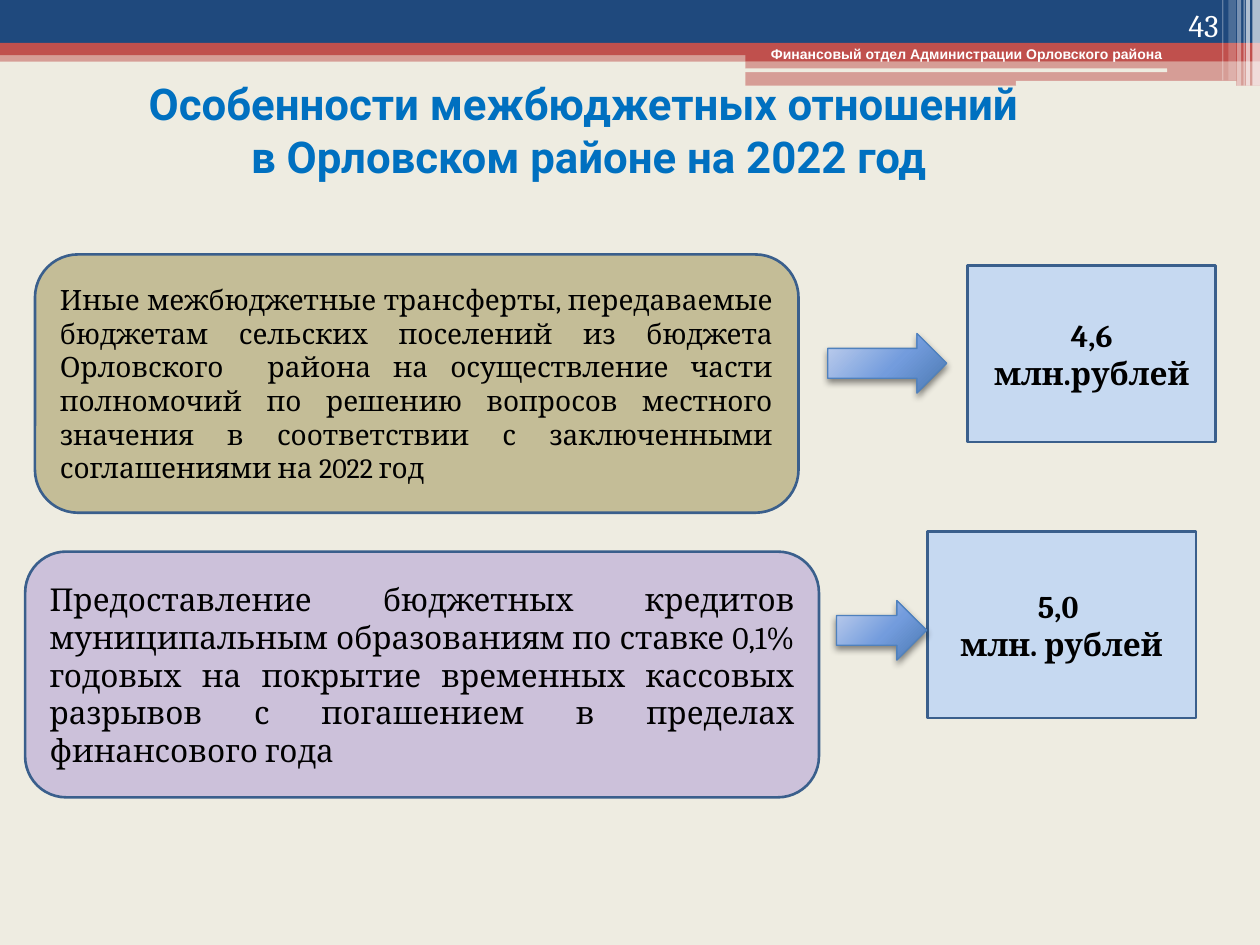
"""Builds a slide on inter-budget relations in the Orlovsky district."""
from dataclasses import dataclass

from lxml import etree
from pptx import Presentation, util as u
from pptx.dml.color import RGBColor
from pptx.enum import shapes, text
from pptx.oxml.ns import qn


@dataclass(frozen=True)
class Theme:
    """Colours, fonts and type sizes of the slide."""
    background: str = "EEECE1"
    navy: str = "1F497D"
    red: str = "C0504D"
    white: str = "FFFFFF"
    black: str = "000000"
    title: str = "0070C0"
    outline: str = "3A5F8C"
    arrow_outline: str = "4F81BD"
    amount: str = "C6D9F1"
    khaki: str = "C4BD97"
    lilac: str = "CCC1DA"
    arrow_stops: tuple = ((0, "C4D2EE"), (55, "739CDD"), (100, "4A78B0"))
    body_font: str = "Cambria"
    title_font: str = "Roboto"
    header_font: str = "Arial"
    title_size: int = 25
    body_size: int = 18
    small_size: int = 16
    header_size: int = 8


THEME = Theme()
RECTANGLE = shapes.MSO_SHAPE.RECTANGLE
ROUNDED = shapes.MSO_SHAPE.ROUNDED_RECTANGLE
ALIGN = text.PP_ALIGN
ANCHOR = text.MSO_ANCHOR


def add_element(parent, tag, **attributes):
    """Append a DrawingML element and return it."""
    values = {name: str(value) for name, value in attributes.items()}
    return etree.SubElement(parent, qn(f"a:{tag}"), values)


def add_color(parent, color, opacity=100):
    """Append an RGB colour with its opacity in percent."""
    element = add_element(parent, "srgbClr", val=color)
    if opacity < 100:
        add_element(element, "alpha", val=opacity * 1000)


def add_block(slide, kind, box, fill=None, opacity=100, line=None, weight=1.5):
    """Add a preset shape without shadow; box is left, top, width, height."""
    shape = slide.shapes.add_shape(kind, *map(u.Pt, box))
    shape.shadow.inherit = False
    if fill:
        shape.fill.solid()
        shape.fill.fore_color.rgb = RGBColor.from_string(fill)
        if opacity < 100:
            color = shape.fill._xPr.find(qn("a:solidFill"))[0]
            add_element(color, "alpha", val=opacity * 1000)
    if line:
        shape.line.color.rgb = RGBColor.from_string(line)
        shape.line.width = u.Pt(weight)
    else:
        shape.line.fill.background()
    return shape


def write_text(shape, *lines, size=THEME.body_size, font=THEME.body_font,
               color=THEME.black, bold=False, align=ALIGN.CENTER,
               anchor=ANCHOR.MIDDLE, indent=0):
    """Write one paragraph per line into the shape."""
    frame = shape.text_frame
    frame.word_wrap = True
    frame.vertical_anchor = anchor
    frame.margin_left = u.Pt(7.2 + indent)
    for index, line in enumerate(lines):
        paragraph = frame.add_paragraph() if index else frame.paragraphs[0]
        paragraph.text = line
        paragraph.alignment = align
        paragraph.font.size = u.Pt(size)
        paragraph.font.name = font
        paragraph.font.bold = bold
        paragraph.font.color.rgb = RGBColor.from_string(color)


def add_label(slide, box, line, **text_format):
    """Add a text box with one paragraph."""
    write_text(slide.shapes.add_textbox(*map(u.Pt, box)), line, **text_format)


def add_arrow(slide, box):
    """Add a right arrow with a radial gradient and a soft shadow."""
    arrow = add_block(slide, shapes.MSO_SHAPE.RIGHT_ARROW, box,
                      line=THEME.arrow_outline, weight=0.75)
    arrow.fill.gradient()
    properties = arrow._element.spPr
    gradient = properties.find(qn("a:gradFill"))
    for child in list(gradient):
        gradient.remove(child)
    stops = add_element(gradient, "gsLst")
    for position, color in THEME.arrow_stops:
        add_color(add_element(stops, "gs", pos=position * 1000), color)
    radial = add_element(gradient, "path", path="circle")
    add_element(radial, "fillToRect", l=-40000, t=-90000, r=140000, b=190000)
    shadow = add_element(properties.find(qn("a:effectLst")), "outerShdw",
                         blurRad=u.Pt(4), dist=u.Pt(2), dir=90 * 60000,
                         algn="ctr", rotWithShape=0)
    add_color(shadow, THEME.black, 45)


def add_header(slide):
    """Add the coloured bands, the stripes at the right and the header text."""
    bands = (
        (RECTANGLE, (0, 28.8, 720, 6.5), THEME.red, 50),
        (RECTANGLE, (0, 0, 720, 24.5), THEME.navy, 100),
        (RECTANGLE, (0, 24.5, 720, 7), THEME.red, 100),
        (RECTANGLE, (426, 28, 294, 7), THEME.red, 100),
        (RECTANGLE, (426, 35, 294, 14), THEME.red, 50),
        (ROUNDED, (425.8, 39.1, 241.2, 2.2), THEME.background, 100),
        (ROUNDED, (580.5, 46.2, 126, 2.9), THEME.background, 100),
    )
    for kind, box, color, opacity in bands:
        add_block(slide, kind, box, color, opacity)
    stripes = (
        (715.7, 4.3, 49, 65), (712, 2.2, 49, 65), (710.6, 0.7, 49, 60),
        (707, 2.2, 49, 40), (702, 4.3, 46, 20), (698.4, 0.7, 46, 30),
    )
    for left, width, height, opacity in stripes:
        add_block(slide, RECTANGLE, (left, 0, width, height), THEME.white, opacity)
    add_label(slide, (433.4, 22.3, 264.2, 17.3),
              "Финансовый отдел Администрации Орловского района",
              size=THEME.header_size, font=THEME.header_font, color=THEME.white,
              bold=True, align=ALIGN.LEFT, anchor=ANCHOR.TOP)


def add_item(slide, box, fill, description, size, arrow_box, amount_box, amount):
    """Add a description, an arrow and the amount it points to."""
    card = add_block(slide, ROUNDED, box, fill, line=THEME.outline)
    write_text(card, description, size=size, align=ALIGN.JUSTIFY)
    panel = add_block(slide, RECTANGLE, amount_box, THEME.amount, line=THEME.outline)
    write_text(panel, *amount, bold=True)
    add_arrow(slide, arrow_box)


def main():
    """Build and save the presentation."""
    presentation = Presentation()
    presentation.slide_width, presentation.slide_height = u.Pt(720), u.Pt(540)
    slide = presentation.slides.add_slide(presentation.slide_layouts[6])
    slide.background.fill.solid()
    slide.background.fill.fore_color.rgb = RGBColor.from_string(THEME.background)
    add_header(slide)
    add_label(slide, (0, 37.4, 666, 73.4),
              "Особенности межбюджетных отношений \vв Орловском районе на 2022 год",
              size=THEME.title_size, font=THEME.title_font, color=THEME.title,
              bold=True, indent=6.5)
    add_label(slide, (643.7, 0, 59.8, 28.8), "43", color=THEME.white,
              align=ALIGN.RIGHT, anchor=ANCHOR.BOTTOM)
    add_item(slide, (20, 145.4, 436.3, 147.6), THEME.khaki,
             "Иные межбюджетные трансферты, передаваемые бюджетам сельских "
             "поселений из бюджета Орловского  района на осуществление части "
             "полномочий по решению вопросов местного значения в соответствии "
             "с заключенными соглашениями на 2022 год",
             THEME.small_size, (473, 190.6, 68, 34), (553, 151.9, 141.8, 100.8),
             ("4,6", "млн.рублей"))
    add_item(slide, (14.4, 315.2, 453.6, 140.4), THEME.lilac,
             "Предоставление бюджетных кредитов муниципальным образованиям по "
             "ставке 0,1% годовых на покрытие временных кассовых разрывов с "
             "погашением в пределах финансового года",
             THEME.body_size, (478, 343.2, 51.5, 34), (530, 303.8, 153.4, 106.6),
             ("5,0 ", "млн. рублей"))
    presentation.save("out.pptx")


if __name__ == "__main__":
    main()
